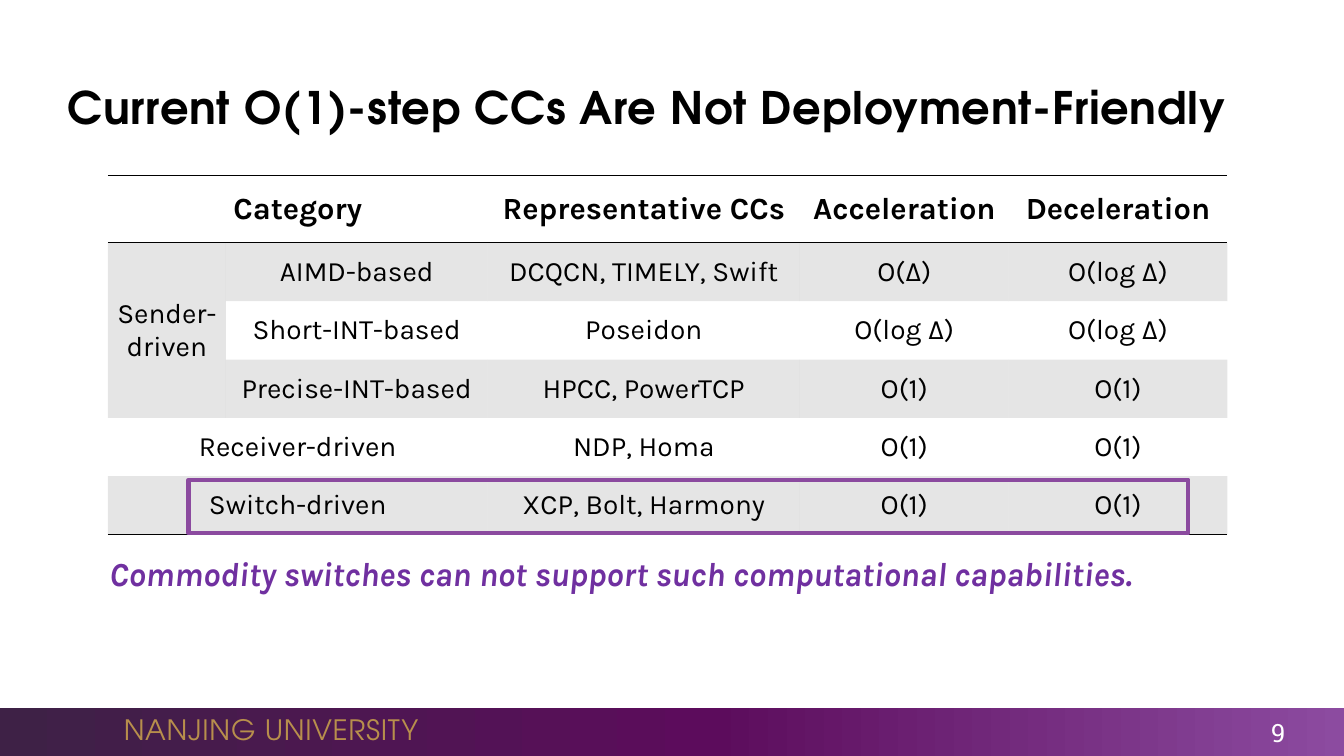
from copy import deepcopy
from lxml import etree
from pptx import Presentation
from pptx import util as u
from pptx.dml.color import RGBColor
from pptx.enum import shapes, text
from pptx.oxml.ns import qn

BLACK = RGBColor(0x00, 0x00, 0x00)
WHITE = RGBColor(0xFF, 0xFF, 0xFF)
GREY = RGBColor(0x80, 0x80, 0x80)
GOLD = RGBColor(0xB8, 0x8F, 0x4C)
PURPLE = RGBColor(0x70, 0x30, 0xA0)
FRAME = RGBColor(0x8B, 0x4A, 0x9F)
FADE = [(0, RGBColor(0x3E, 0x21, 0x46)), (0.53, RGBColor(0x5C, 0x0C, 0x5C)),
        (1, RGBColor(0x8C, 0x4B, 0xA0))]

HEAD = {"name": "TeX Gyre Adventor", "size": 32, "bold": True, "color": BLACK, "spc": 50}
SCHOOL = {"name": "TeX Gyre Adventor", "size": 20, "color": GOLD, "spc": 50}
PAGE = {"name": "Roboto Slab", "size": 18, "color": WHITE}
TOP = {"name": "Karla", "size": 22, "bold": True, "color": BLACK}
CELL = {"name": "Karla", "size": 20, "bold": False, "color": BLACK}
NOTE = {"name": "Karla", "size": 24, "bold": True, "italic": True, "color": PURPLE}

PLAIN = "{2D5ABB26-0587-4C30-8999-92F81FD0307C}"
ROWS = [1.7] + [1.47] * 5
KINDS = [["Category", ""], ["Sender-driven", "AIMD-based"], ["", "Short-INT-based"],
         ["", "Precise-INT-based"], ["Receiver-driven", ""], ["Switch-driven", ""]]
NAMES = [["Representative CCs"], ["DCQCN, TIMELY, Swift"], ["Poseidon"],
         ["HPCC, PowerTCP"], ["NDP, Homa"], ["XCP, Bolt, Harmony"]]
STEPS = [["Acceleration", "Deceleration"], ["O(Δ)", "O(log Δ)"],
         ["O(log Δ)", "O(log Δ)"]] + [["O(1)", "O(1)"]] * 3
SPANS = [(0, 0, 0, 1), (1, 0, 3, 0), (4, 0, 4, 1), (5, 0, 5, 1)]
TABLES = [(KINDS, [2.97, 6.6], SPANS), (NAMES, [7.87], []), (STEPS, [5.26, 5.51], [])]


class Deck:
    def __init__(self):
        self.prs = Presentation()
        self.prs.slide_width, self.prs.slide_height = u.Cm(33.87), u.Cm(19.05)
        self.slide = self.prs.slides.add_slide(self.prs.slide_layouts[5])

    def put(self, frame, words, style, align=text.PP_ALIGN.LEFT):
        para = frame.paragraphs[0]
        para.alignment = align
        run = para.add_run()
        run.text = words
        for key, val in style.items():
            if key == "color":
                run.font.color.rgb = val
            elif key == "spc":
                run.font._element.set("spc", str(val))
            else:
                setattr(run.font, key, u.Pt(val) if key == "size" else val)

    def title(self, words, box):
        shape = self.slide.shapes.title
        for key, val in zip(("left", "top", "width", "height"), box):
            setattr(shape, key, u.Cm(val))
        frame = shape.text_frame
        frame.auto_size = text.MSO_AUTO_SIZE.NONE
        frame.vertical_anchor = text.MSO_ANCHOR.MIDDLE
        self.put(frame, words, HEAD)

    def label(self, words, box, style, align=text.PP_ALIGN.LEFT,
              anchor=text.MSO_ANCHOR.MIDDLE, wrap=True):
        frame = self.slide.shapes.add_textbox(*map(u.Cm, box)).text_frame
        frame.word_wrap = wrap
        frame.vertical_anchor = anchor
        self.put(frame, words, style, align)

    def rect(self, box):
        shape = self.slide.shapes.add_shape(shapes.MSO_SHAPE.RECTANGLE, *map(u.Cm, box))
        shape.shadow.inherit = False
        return shape

    def band(self, box):
        shape = self.rect(box)
        shape.line.fill.background()
        shape.fill.gradient()
        shape.fill.gradient_angle = 0
        stops = shape._element.spPr.find(qn("a:gradFill")).find(qn("a:gsLst"))
        stops.insert(1, deepcopy(stops[0]))
        for stop, (pos, color) in zip(shape.fill.gradient_stops, FADE):
            stop.position = pos
            stop.color.rgb = color

    def frame(self, box):
        shape = self.rect(box)
        shape.fill.background()
        shape.line.color.rgb = FRAME
        shape.line.width = u.Pt(3)

    def paint(self, cell, row):
        props = cell._tc.get_or_add_tcPr()
        if row % 2:
            cell.fill.solid()
            cell.fill.fore_color.rgb = GREY
            tint = next(props.iter(qn("a:srgbClr")))
            etree.SubElement(tint, qn("a:alpha")).set("val", "20000")
        else:
            cell.fill.background()
        sides = {0: ["a:lnT", "a:lnB"], len(ROWS) - 1: ["a:lnB"]}.get(row, [])
        for spot, side in enumerate(sides):
            edge = etree.Element(qn(side), w=str(u.Pt(1)))
            ink = etree.SubElement(edge, qn("a:solidFill"))
            etree.SubElement(ink, qn("a:srgbClr")).set("val", str(BLACK))
            props.insert(spot, edge)

    def table(self, data, cols, spans, left, top):
        box = map(u.Cm, (left, top, sum(cols), sum(ROWS)))
        table = self.slide.shapes.add_table(len(ROWS), len(cols), *box).table
        table.first_row = table.horz_banding = False
        table._tbl.tblPr.find(qn("a:tableStyleId")).text = PLAIN
        for col, width in zip(table.columns, cols):
            col.width = u.Cm(width)
        for row, height in zip(table.rows, ROWS):
            row.height = u.Cm(height)
        for r1, c1, r2, c2 in spans:
            table.cell(r1, c1).merge(table.cell(r2, c2))
        for r, line in enumerate(data):
            for c, words in enumerate(line):
                cell = table.cell(r, c)
                cell.vertical_anchor = text.MSO_ANCHOR.MIDDLE
                if r:
                    for side in ("left", "right", "top", "bottom"):
                        setattr(cell, "margin_" + side, u.Cm(0.08))
                self.paint(cell, r)
                if words:
                    self.put(cell.text_frame, words, CELL if r else TOP,
                             text.PP_ALIGN.CENTER)


def main():
    deck = Deck()
    deck.band((0, 17.83, 33.87, 1.22))
    deck.label("NANJING UNIVERSITY", (2.87, 17.83, 8.05, 1.12), SCHOOL, wrap=False)
    deck.label("9", (29.95, 18.01, 2.69, 0.89), PAGE, text.PP_ALIGN.RIGHT)
    deck.title("Current O(1)-step CCs Are Not Deployment-Friendly", (1.45, 1.7, 30.48, 1.96))
    left = 2.72
    for data, cols, spans in TABLES:
        deck.table(data, cols, spans, left, 4.42)
        left += sum(cols)
    deck.frame((4.75, 12.09, 25.2, 1.35))
    deck.label("Commodity switches can not support such computational capabilities.",
               (2.51, 13.82, 29.41, 1.27), NOTE, anchor=text.MSO_ANCHOR.TOP)
    deck.prs.save("out.pptx")


if __name__ == "__main__":
    main()
